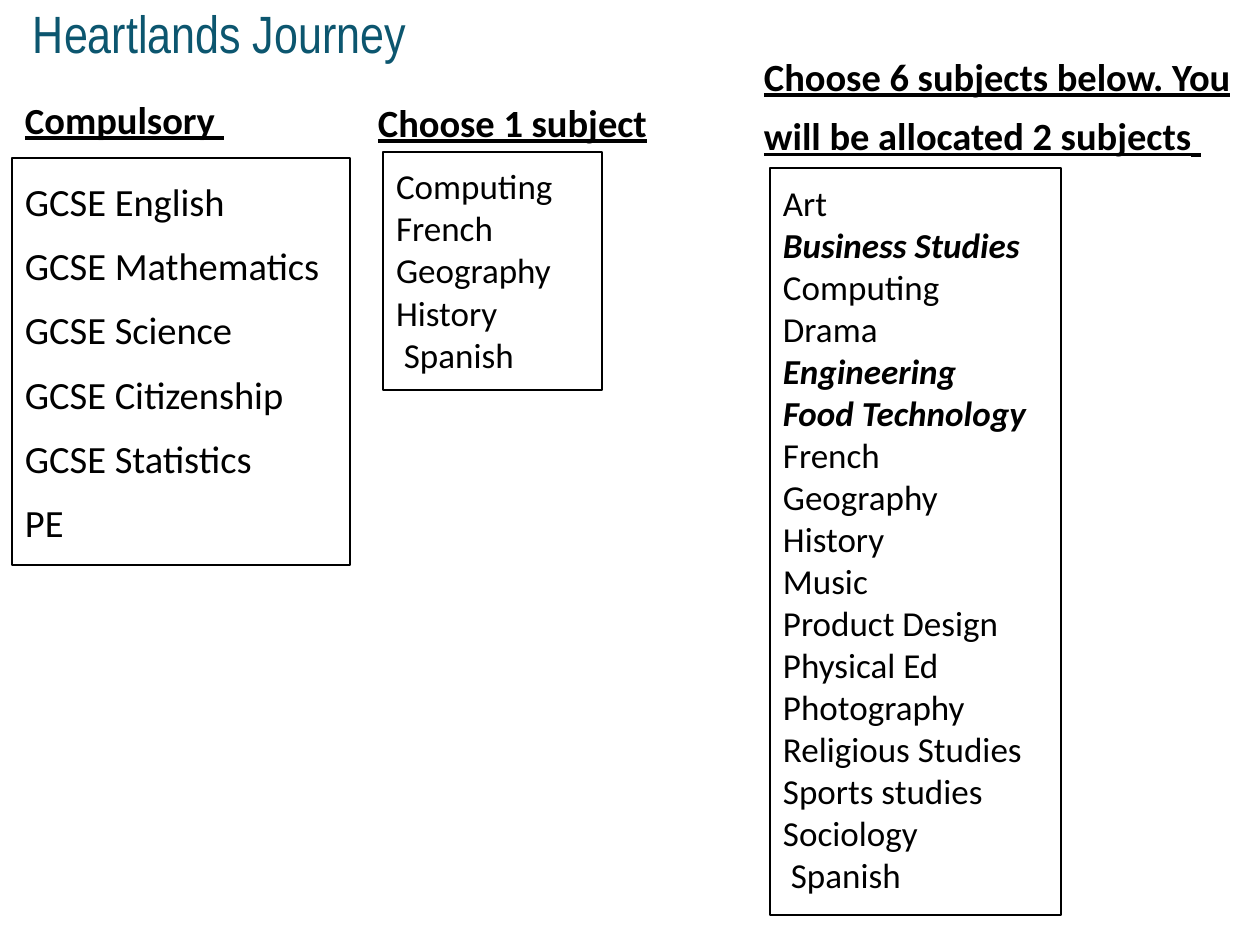
import pptx
import pptx.dml.color
import pptx.enum.shapes
import pptx.enum.text
import pptx.util

BLACK = pptx.dml.color.RGBColor(0x00, 0x00, 0x00)
TEAL = pptx.dml.color.RGBColor(0x0C, 0x56, 0x6F)
SCALE = 914400 / 126
PAD = 13

CORE = ["GCSE English", "GCSE Mathematics", "GCSE Science",
        "GCSE Citizenship", "GCSE Statistics", "PE"]
SINGLE = ["Computing", "French", "Geography", "History", " Spanish"]
OPTIONS = ["Art", "Business Studies", "Computing", "Drama", "Engineering",
           "Food Technology", "French", "Geography", "History", "Music",
           "Product Design", "Physical Ed", "Photography",
           "Religious Studies", "Sports studies", "Sociology", " Spanish"]
STRONG = {"Business Studies", "Engineering", "Food Technology"}


def px(n):
    """Turn pixels into EMU."""
    return pptx.util.Emu(round(n * SCALE))


def set_frame(frame, pads, grow=False, anchor="TOP"):
    """Set wrapping, insets, anchor and fitting of a text frame."""
    fit = pptx.enum.text.MSO_AUTO_SIZE
    frame.word_wrap = True
    frame.auto_size = fit.SHAPE_TO_FIT_TEXT if grow else fit.NONE
    frame.vertical_anchor = pptx.enum.text.MSO_ANCHOR[anchor]
    (frame.margin_left, frame.margin_top,
     frame.margin_right, frame.margin_bottom) = map(px, pads)


def add_run(para, text, size, color=BLACK, face="Calibri"):
    """Add one run and return its font."""
    run = para.add_run()
    run.text = text
    font = run.font
    font.name = face
    font.size = pptx.util.Pt(size)
    font.color.rgb = color
    return font


def add_title(slide, text):
    """Move and fill the title placeholder."""
    title = slide.shapes.title
    title.left, title.top, title.width, title.height = map(px, (33, -66, 1174, 130))
    set_frame(title.text_frame, (0, PAD, PAD, 0), anchor="BOTTOM")
    para = title.text_frame.paragraphs[0]
    para.alignment = pptx.enum.text.PP_ALIGN.LEFT
    add_run(para, text, 30, TEAL, "Arial Narrow")


def add_head(slide, place, runs):
    """Add an underlined heading made of (text, size) runs."""
    frame = slide.shapes.add_textbox(*map(px, place)).text_frame
    set_frame(frame, [PAD] * 4, grow=True)
    para = frame.paragraphs[0]
    para.line_spacing = 1.15
    for text, size in runs:
        font = add_run(para, text, size)
        font.bold = font.underline = True


def add_list(slide, place, items, size, loose=False):
    """Add an outlined box with one subject per paragraph."""
    kind = pptx.enum.shapes.MSO_SHAPE.RECTANGLE
    box = slide.shapes.add_shape(kind, *map(px, place))
    box.shadow.inherit = False
    box.fill.background()
    box.line.color.rgb = BLACK
    box.line.width = pptx.util.Pt(1.5)
    frame = box.text_frame
    set_frame(frame, [PAD] * 4, grow=not loose)
    for i, item in enumerate(items):
        para = frame.add_paragraph() if i else frame.paragraphs[0]
        para.alignment = pptx.enum.text.PP_ALIGN.LEFT
        if loose:
            para.line_spacing = 1.15
            para.space_before = pptx.util.Pt(6.4 if i else 0)
        font = add_run(para, item, size)
        font.bold = font.italic = item in STRONG


def main():
    """Build the subject choice slide."""
    deck = pptx.Presentation()
    deck.slide_width, deck.slide_height = px(1260), px(945)
    slide = deck.slides.add_slide(deck.slide_layouts.get_by_name("Title Only"))
    add_title(slide, "Heartlands Journey")
    add_list(slide, (12, 158, 338, 407), CORE, 22, loose=True)
    add_list(slide, (770, 168, 291, 747), OPTIONS, 20)
    add_head(slide, (751, 33, 509, 132), [
        ("Choose 6 subjects below. You will be allocated 2 subjects", 22), (" ", 25)])
    add_list(slide, (383, 152, 219, 238), SINGLE, 20)
    add_head(slide, (365, 79, 413, 72), [("Choose 1 subject", 22)])
    add_head(slide, (12, 76, 413, 72), [("C", 21), ("ompulsory ", 22)])
    deck.save("out.pptx")


if __name__ == "__main__":
    main()
